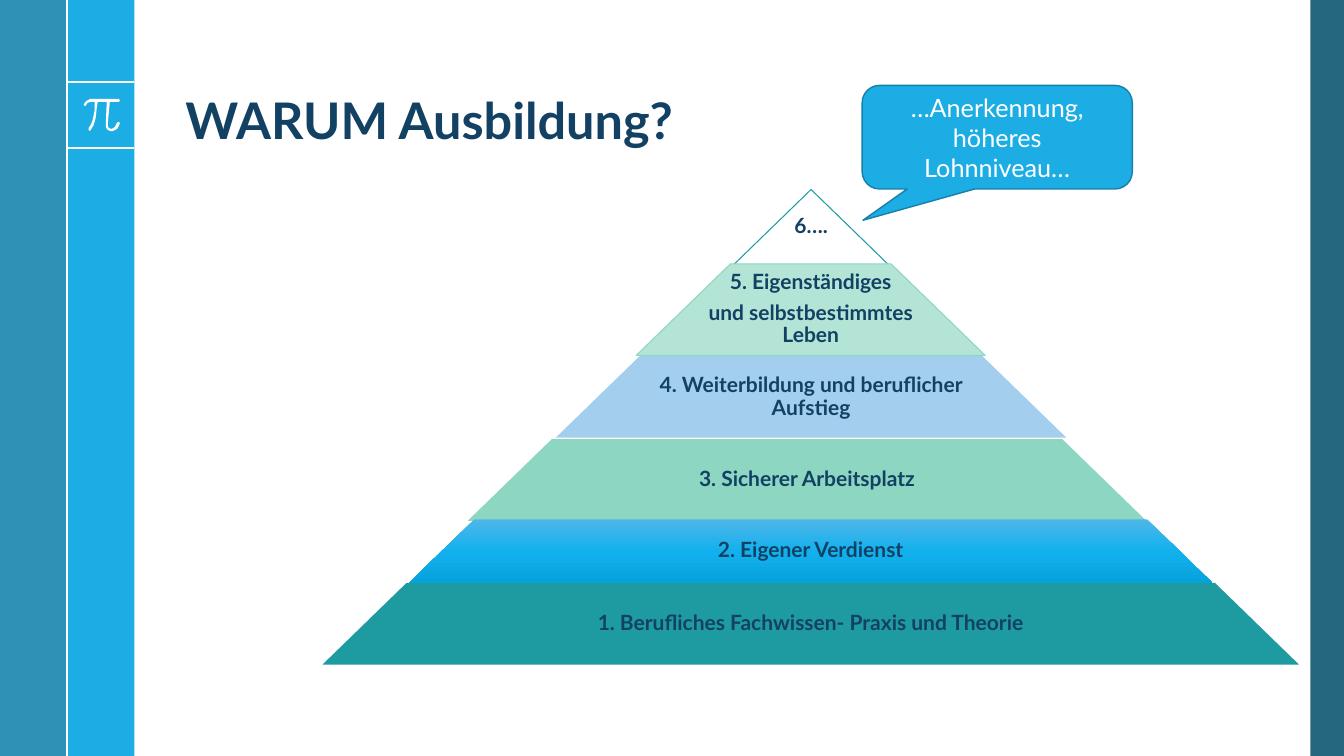
from copy import deepcopy
from dataclasses import dataclass

from lxml.etree import SubElement
from pptx import Presentation
from pptx.dml.color import RGBColor
from pptx.enum.shapes import MSO_CONNECTOR, MSO_SHAPE
from pptx.enum.text import MSO_ANCHOR, PP_ALIGN
from pptx.oxml.ns import qn
from pptx.util import Inches, Pt

COLUMNS, ROWS = 20, 10
SLIDE_WIDTH, SLIDE_HEIGHT = Inches(13.33), Inches(7.5)
FONT = "Lato"
NAVY, WHITE, SKY = "134163", "FFFFFF", "1CADE4"
LAYER_SLANT = 1.029
LAYER_INSET = Inches(0.02)


@dataclass
class Area:
    """A rectangle in grid columns and rows."""
    left: float
    top: float
    width: float
    height: float

    def box(self) -> tuple[int, int, int, int]:
        return x(self.left), y(self.top), x(self.width), y(self.height)

    def narrowed(self, share: float) -> "Area":
        return Area(self.left + self.width * (1 - share) / 2, self.top,
                    self.width * share, self.height)


@dataclass
class Bar:
    area: Area
    fill: str
    opacity: int = 100


@dataclass
class Rule:
    start: tuple[float, float]
    end: tuple[float, float]


@dataclass
class Layer:
    area: Area
    text: str
    fills: tuple[str, ...]
    outline: str = ""
    text_share: float = 0.65


BARS = [
    Bar(Area(19.5, 0, 0.5, ROWS), "0E5772", 90),
    Bar(Area(1, 0, 1, ROWS), SKY),
    Bar(Area(0, 0, 1, ROWS), "1482AC", 88),
]
RULES = [
    Rule((1, 1.08), (2, 1.08)),
    Rule((1, 1.96), (2, 1.96)),
    Rule((1, 0), (1, ROWS)),
]
# Outline of the pi sign in hundredths of an inch
PI_SIGN = [
    (118, 98), (90, 98), (86.5, 99.5), (84, 102), (83, 104), (84, 105), (85, 105),
    (87, 102), (90, 101), (94, 101), (93.5, 109), (92, 119), (90, 124), (88, 127),
    (87.5, 128), (88, 129), (89, 129.5), (90, 129), (93, 124), (95, 117), (96.5, 107),
    (97, 101), (106, 101), (105, 122), (105, 126), (107, 129), (110, 130), (112, 130),
    (115.5, 128.5), (118, 125), (119, 122), (118, 121), (117, 121), (116, 122),
    (114.5, 126), (111, 128), (108, 127), (107, 125), (107, 122), (109, 101),
    (118, 101), (119, 100),
]
TITLE_AREA = Area(2.61, 0.25, 16.05, 1.81)
CALLOUT_AREA = Area(12.83, 1.13, 4.02, 1.37)
PYRAMID = [
    Layer(Area(10.92, 2.51, 2.3, 0.99), "6….", (WHITE,), "1D9BA1", 1),
    Layer(Area(9.47, 3.49, 5.19, 1.21),
          "5. Eigenständiges\nund selbstbestimmtes Leben", ("B3E4D6",), "8DD6C1"),
    Layer(Area(8.27, 4.71, 7.6, 1.08),
          "4. Weiterbildung und beruflicher Aufstieg", ("A3CEED",)),
    Layer(Area(6.96, 5.81, 10.1, 1.08), "3. Sicherer Arbeitsplatz", ("8DD6C1",)),
    Layer(Area(6.09, 6.87, 11.95, 0.84), "2. Eigener Verdienst",
          ("4FB6E9", "12B1EE", "06A2DD")),
    Layer(Area(4.8, 7.71, 14.53, 1.08),
          "1. Berufliches Fachwissen- Praxis und Theorie", ("1D9BA1",)),
]


def x(columns: float) -> int:
    return round(SLIDE_WIDTH * columns / COLUMNS)


def y(rows: float) -> int:
    return round(SLIDE_HEIGHT * rows / ROWS)


def color(value: str) -> RGBColor:
    return RGBColor.from_string(value)


def paint(shape, fill: str, outline: str = "", weight: float = 0.75) -> None:
    shape.shadow.inherit = False
    shape.fill.solid()
    shape.fill.fore_color.rgb = color(fill)
    if outline:
        shape.line.color.rgb = color(outline)
        shape.line.width = Pt(weight)
    else:
        shape.line.fill.background()


def paint_gradient(shape, fills: tuple[str, ...]) -> None:
    """Spread the colours evenly from top to bottom."""
    shape.fill.gradient()
    shape.fill.gradient_angle = 270
    stop_list = shape.element.spPr.find(qn("a:gradFill")).find(qn("a:gsLst"))
    while len(stop_list) < len(fills):
        stop_list.append(deepcopy(stop_list[-1]))
    for index, stop in enumerate(shape.fill.gradient_stops):
        stop.position = index / (len(fills) - 1)
        stop.color.rgb = color(fills[index])


def write(frame, text: str, size: float, ink: str, bold: bool, align,
          spacing: float = 1, after: float = 0) -> None:
    frame.word_wrap = True
    frame.text = text
    for paragraph in frame.paragraphs:
        paragraph.alignment = align
        paragraph.line_spacing = spacing
        paragraph.space_after = Pt(after)
        for run in paragraph.runs:
            run.font.name = FONT
            run.font.size = Pt(size)
            run.font.bold = bold
            run.font.color.rgb = color(ink)


def draw_bar(slide, bar: Bar) -> None:
    shape = slide.shapes.add_shape(MSO_SHAPE.RECTANGLE, *bar.area.box())
    paint(shape, bar.fill)
    if bar.opacity < 100:
        tint = shape.element.spPr.find(qn("a:solidFill"))[0]
        SubElement(tint, qn("a:alpha")).set("val", str(bar.opacity * 1000))


def draw_rule(slide, rule: Rule) -> None:
    (x1, y1), (x2, y2) = rule.start, rule.end
    line = slide.shapes.add_connector(MSO_CONNECTOR.STRAIGHT, x(x1), y(y1), x(x2), y(y2))
    line.line.color.rgb = color(WHITE)
    line.line.width = Pt(1.5)
    SubElement(line.element.spPr, qn("a:effectLst"))


def draw_pi_sign(slide) -> None:
    outline = slide.shapes.build_freeform(*PI_SIGN[0], scale=Inches(0.01))
    outline.add_line_segments(PI_SIGN[1:], close=True)
    paint(outline.convert_to_shape(), WHITE)


def draw_title(slide) -> None:
    title = slide.shapes.title
    title.left, title.top, title.width, title.height = TITLE_AREA.box()
    title.text_frame.vertical_anchor = MSO_ANCHOR.BOTTOM
    write(title.text_frame, "WARUM Ausbildung?", 36, NAVY, True, PP_ALIGN.LEFT, 0.9)


def draw_layer(slide, layer: Layer) -> None:
    trapezoid = slide.shapes.add_shape(MSO_SHAPE.TRAPEZOID, *layer.area.box())
    trapezoid.adjustments[0] = LAYER_SLANT
    paint(trapezoid, layer.fills[0], layer.outline)
    if len(layer.fills) > 1:
        paint_gradient(trapezoid, layer.fills)
    label = slide.shapes.add_textbox(*layer.area.narrowed(layer.text_share).box())
    frame = label.text_frame
    frame.margin_left = frame.margin_right = LAYER_INSET
    frame.margin_top = frame.margin_bottom = LAYER_INSET
    frame.vertical_anchor = MSO_ANCHOR.MIDDLE
    write(frame, layer.text, 15, NAVY, True, PP_ALIGN.CENTER, 0.9, 5.25)


def draw_callout(slide) -> None:
    callout = slide.shapes.add_shape(MSO_SHAPE.ROUNDED_RECTANGULAR_CALLOUT,
                                     *CALLOUT_AREA.box())
    for index, value in enumerate((-0.497, 0.802, 0.167)):
        callout.adjustments[index] = value
    paint(callout, SKY, "1580A9", 1)
    callout.text_frame.vertical_anchor = MSO_ANCHOR.MIDDLE
    write(callout.text_frame, "…Anerkennung, höheres Lohnniveau…", 18, WHITE, False,
          PP_ALIGN.CENTER)


def main() -> None:
    deck = Presentation()
    deck.slide_width, deck.slide_height = SLIDE_WIDTH, SLIDE_HEIGHT
    slide = deck.slides.add_slide(deck.slide_layouts[5])
    for bar in BARS:
        draw_bar(slide, bar)
    for rule in RULES:
        draw_rule(slide, rule)
    draw_pi_sign(slide)
    draw_title(slide)
    for layer in PYRAMID:
        draw_layer(slide, layer)
    draw_callout(slide)
    deck.save("out.pptx")


if __name__ == "__main__":
    main()
